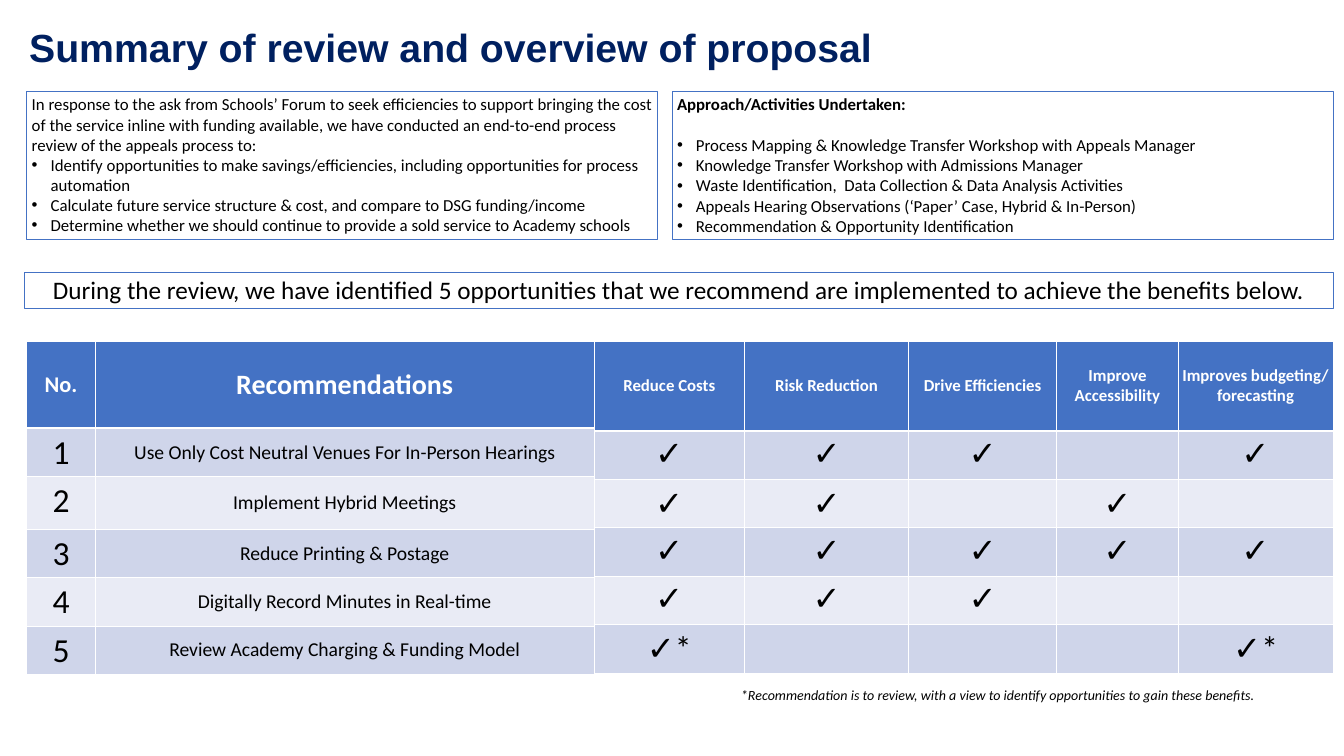
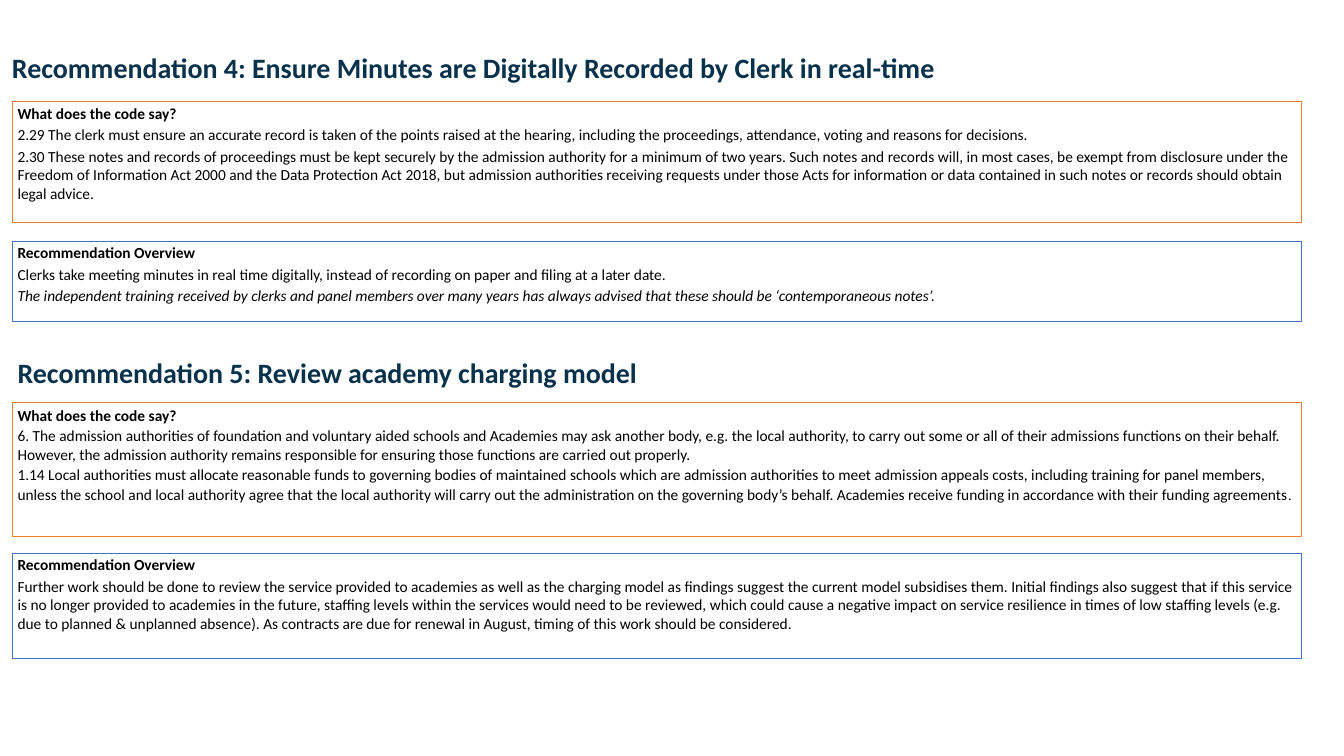
from dataclasses import dataclass

from lxml.etree import SubElement
from pptx import Presentation
from pptx.dml.color import RGBColor
from pptx.enum.shapes import MSO_SHAPE as Preset
from pptx.enum.text import MSO_ANCHOR as Anchor, PP_ALIGN as Align
from pptx.oxml.ns import qn
from pptx.util import Pt

BLUE, ORANGE, NAVY, INK = "4472C4", "ED7D31", "002060", "08314C"
WHITE, BLACK = "FFFFFF", "000000"
BANDS = ("E9EBF5", "CFD5EA")
BODY_FONT, TITLE_FONT = "Calibri", "Arial"
BULLET_INDENT = 27
CELL_MARGIN = 5.76
TABLE_TOP = 487.4

CODE_HEADING = "What does the code say?"
OVERVIEW_HEADING = "Recommendation Overview"
HEADINGS = ("Reduce Costs", "Risk Reduction", "Drive Efficiencies",
            "Improve Accessibility", "Improves budgeting/\nforecasting")
RECOMMENDATIONS = (
    "Use Only Cost Neutral Venues For In-Person Hearings",
    "Implement Hybrid Meetings",
    "Reduce Printing & Postage",
    "Digitally Record Minutes in Real-time",
    "Review Academy Charging & Funding Model",
)
BENEFITS = (
    ("✓", "✓", "✓", "", "✓"),
    ("✓", "✓", "", "✓", ""),
    ("✓", "✓", "✓", "✓", "✓"),
    ("✓", "✓", "✓", "", ""),
    ("✓*", "", "", "", "✓*"),
)
REVIEW_INTRO = (
    "In response to the ask from Schools’ Forum to seek efficiencies to support bringing "
    "the cost of the service inline with funding available, we have conducted an "
    "end-to-end process review of the appeals process to:")
REVIEW_AIMS = (
    "Identify opportunities to make savings/efficiencies, including opportunities for "
    "process automation",
    "Calculate future service structure & cost, and compare to DSG funding/income",
    "Determine whether we should continue to provide a sold service to Academy schools",
)
ACTIVITIES = (
    "Process Mapping & Knowledge Transfer Workshop with Appeals Manager",
    "Knowledge Transfer Workshop with Admissions Manager",
    "Waste Identification,  Data Collection & Data Analysis Activities",
    "Appeals Hearing Observations (‘Paper’ Case, Hybrid & In-Person)",
    "Recommendation & Opportunity Identification",
)
MINUTES_CODE = (
    "2.29 The clerk must ensure an accurate record is taken of the points raised at the "
    "hearing, including the proceedings, attendance, voting and reasons for decisions.",
    "2.30 These notes and records of proceedings must be kept securely by the admission "
    "authority for a minimum of two years. Such notes and records will, in most cases, be "
    "exempt from disclosure under the Freedom of Information Act 2000 and the Data "
    "Protection Act 2018, but admission authorities receiving requests under those Acts "
    "for information or data contained in such notes or records should obtain legal advice.",
)
MINUTES_OVERVIEW = (
    "Clerks take meeting minutes in real time digitally, instead of recording on paper and "
    "filing at a later date.")
MINUTES_REMARK = (
    "The independent training received by clerks and panel members over many years has "
    "always advised that these should be ‘contemporaneous notes’.")
CHARGING_CODE = (
    "\n6. The admission authorities of foundation and voluntary aided schools and Academies "
    "may ask another body, e.g. the local authority, to carry out some or all of their "
    "admissions functions on their behalf. However, the admission authority remains "
    "responsible for ensuring those functions are carried out properly.\n"
    "1.14 Local authorities must allocate reasonable funds to governing bodies of maintained "
    "schools which are admission authorities to meet admission appeals costs, including "
    "training for panel members, unless the school and local authority agree that the local "
    "authority will carry out the administration on the governing body’s behalf. Academies "
    "receive funding in accordance with their funding agreements")
CHARGING_OVERVIEW = (
    "Further work should be done to review the service provided to academies as well as the "
    "charging model as findings suggest the current model subsidises them. Initial findings "
    "also suggest that if this service is no longer provided to academies in the future, "
    "staffing levels within the services would need to be reviewed, which could cause a "
    "negative impact on service resilience in times of low staffing levels (e.g. due to "
    "planned & unplanned absence). As contracts are due for renewal in August, timing of "
    "this work should be considered.")


@dataclass(frozen=True)
class Box:
    """Place and size in points."""
    left: float
    top: float
    width: float
    height: float

    def lengths(self) -> tuple:
        """Return the four lengths for python-pptx."""
        return Pt(self.left), Pt(self.top), Pt(self.width), Pt(self.height)


def colour(value: str) -> RGBColor:
    """Turn a hex string into a colour."""
    return RGBColor.from_string(value)


def write(frame, text: str, *, size: float, font: str = BODY_FONT, color: str = BLACK,
          bold: bool = False, italic: bool = False, align=Align.LEFT, bullet: bool = False,
          before: float = 0, after: float = 0, spacing: float = 1,
          continued: bool = False) -> None:
    """Add a paragraph to a frame, or continue its last one."""
    paragraph = frame.paragraphs[-1]
    if not continued:
        if paragraph.runs:
            paragraph = frame.add_paragraph()
            paragraph.space_before = Pt(before)
        paragraph.alignment = align
        paragraph.space_after = Pt(after)
        paragraph.line_spacing = spacing
        if bullet:
            properties = paragraph._p.get_or_add_pPr()
            properties.set("marL", str(Pt(BULLET_INDENT)))
            properties.set("indent", str(-Pt(BULLET_INDENT)))
            SubElement(properties, qn("a:buFont"), typeface="Arial")
            SubElement(properties, qn("a:buChar"), char="•")
    for index, line in enumerate(text.split("\n")):
        if index:
            paragraph.add_line_break()
        if line:
            run = paragraph.add_run()
            run.text = line
            run.font.size, run.font.name = Pt(size), font
            run.font.bold, run.font.italic = bold, italic
            run.font.color.rgb = colour(color)


def add_label(slide, box: Box, text: str, *, anchor=Anchor.TOP, **text_format) -> None:
    """Add a wrapped text box with one paragraph."""
    frame = slide.shapes.add_textbox(*box.lengths()).text_frame
    frame.word_wrap = True
    frame.vertical_anchor = anchor
    write(frame, text, **text_format)


def add_panel(slide, box: Box, line: str = BLUE):
    """Add a white outlined rectangle and return its text frame."""
    shape = slide.shapes.add_shape(Preset.RECTANGLE, *box.lengths())
    shape.shadow.inherit = False
    shape.fill.solid()
    shape.fill.fore_color.rgb = colour(WHITE)
    shape.line.color.rgb = colour(line)
    shape.line.width = Pt(1)
    shape.text_frame.word_wrap = True
    shape.text_frame.vertical_anchor = Anchor.TOP
    return shape.text_frame


def add_border(cell, side: str, width: float) -> None:
    """Give one side of a cell a white border."""
    line = SubElement(cell._tc.get_or_add_tcPr(), qn(f"a:{side}"), w=str(Pt(width)))
    SubElement(SubElement(line, qn("a:solidFill")), qn("a:srgbClr"), val=WHITE)


def add_grid(slide, left: float, columns: tuple, rows: tuple):
    """Add a banded table with a blue heading row."""
    box = Box(left, TABLE_TOP, sum(columns), sum(rows))
    table = slide.shapes.add_table(len(rows), len(columns), *box.lengths()).table
    table.horz_banding = False
    for column, width in zip(table.columns, columns):
        column.width = Pt(width)
    for index, (row, height) in enumerate(zip(table.rows, rows)):
        row.height = Pt(height)
        for cell in row.cells:
            add_border(cell, "lnL", 1)
            add_border(cell, "lnR", 1)
            add_border(cell, "lnT", 3 if index == 1 else 1)
            add_border(cell, "lnB", 3 if index == 0 else 1)
            cell.fill.solid()
            cell.fill.fore_color.rgb = colour(BANDS[index % 2] if index else BLUE)
    return table


def fill_cell(cell, text: str, *, middle: bool = True, **text_format) -> None:
    """Write centred text in a cell, one paragraph a line."""
    cell.margin_left = cell.margin_right = Pt(CELL_MARGIN)
    cell.margin_top = cell.margin_bottom = Pt(CELL_MARGIN)
    cell.vertical_anchor = Anchor.MIDDLE if middle else Anchor.TOP
    for line in text.split("\n"):
        write(cell.text_frame, line, align=Align.CENTER, **text_format)


def add_recommendation_table(slide) -> None:
    """Add the numbered list of recommendations."""
    table = add_grid(slide, 38.2, (97.9, 712.1), (124.6, 68.4, 74.9, 68.4, 68.4, 68.4))
    for column, (heading, size) in enumerate((("No.", 32), ("Recommendations", 40))):
        fill_cell(table.cell(0, column), heading, size=size, color=WHITE, bold=True)
    for number, recommendation in enumerate(RECOMMENDATIONS, 1):
        fill_cell(table.cell(number, 0), str(number), size=48, middle=number == 1)
        fill_cell(table.cell(number, 1), recommendation, size=28)


def add_benefit_table(slide) -> None:
    """Add the matrix of benefits with its ticks."""
    table = add_grid(slide, 848.2, (215.3, 234, 211.7, 173.5, 221), (128.2,) + (69.1,) * 5)
    for column, heading in enumerate(HEADINGS):
        fill_cell(table.cell(0, column), heading, size=24, color=WHITE, bold=True)
    for row, marks in enumerate(BENEFITS, 1):
        for column, mark in enumerate(marks):
            if mark:
                cell = table.cell(row, column)
                fill_cell(cell, mark[0], size=48, font=TITLE_FONT, middle=row == 2)
                if mark[1:]:
                    write(cell.text_frame, mark[1:], size=48, continued=True)


def build_summary(slide) -> None:
    """Build the summary of the review."""
    add_benefit_table(slide)
    add_label(slide, Box(34.6, 38.9, 1755.4, 63.4), "Summary of review and overview of proposal",
              anchor=Anchor.MIDDLE, size=56, font=TITLE_FONT, color=NAVY, bold=True, spacing=0.9)
    banner = add_panel(slide, Box(34.6, 388.8, 1869.1, 51.1))
    write(banner, "During the review, we have identified 5 opportunities that we recommend are "
          "implemented to achieve the benefits below.", size=36, align=Align.CENTER)
    add_recommendation_table(slide)
    add_label(slide, Box(1051.2, 977.8, 834.5, 31.7),
              "*Recommendation is to review, with a view to identify opportunities to gain "
              "these benefits.", size=20, italic=True)
    aims = add_panel(slide, Box(38.2, 131, 900.7, 211))
    write(aims, REVIEW_INTRO, size=24)
    activities = add_panel(slide, Box(959.8, 131, 943.9, 211))
    write(activities, "Approach/Activities Undertaken:", size=24, bold=True, after=29.3)
    for frame, items in ((aims, REVIEW_AIMS), (activities, ACTIVITIES)):
        for item in items:
            write(frame, item, size=24, bullet=True)


def build_recommendations(slide) -> None:
    """Build recommendations 4 and 5."""
    body = {"size": 22, "before": 4.4}
    title = {"size": 40, "color": INK, "bold": True}

    def add_section(top: float, height: float, heading: str, line: str, spacing: float = 1):
        """Add a full-width panel with its heading."""
        frame = add_panel(slide, Box(18, top, 1841, height), line)
        write(frame, heading, bold=True, spacing=spacing, **body)
        return frame

    add_label(slide, Box(10, 68.4, 1849, 88.6), "Recommendation 4: Ensure Minutes are "
              "Digitally Recorded by Clerk in real-time", **title)
    minutes_overview = add_section(344.2, 114.5, OVERVIEW_HEADING, BLUE)
    write(minutes_overview, MINUTES_OVERVIEW, **body)
    write(minutes_overview, MINUTES_REMARK, italic=True, **body)
    minutes_code = add_section(144.7, 173.5, CODE_HEADING, ORANGE)
    for clause in MINUTES_CODE:
        write(minutes_code, clause, **body)

    add_label(slide, Box(18, 504.7, 1849, 51.8),
              "Recommendation 5: Review academy charging model", **title)
    charging_code = add_section(574.6, 191.5, CODE_HEADING, ORANGE, spacing=1.07)
    write(charging_code, CHARGING_CODE, size=22, continued=True)
    write(charging_code, ".", size=20, continued=True)
    charging_overview = add_section(789.8, 150.5, OVERVIEW_HEADING, BLUE)
    write(charging_overview, CHARGING_OVERVIEW, **body)


def main() -> None:
    """Build and save the presentation."""
    presentation = Presentation()
    presentation.slide_width, presentation.slide_height = Pt(1919.52), Pt(1080)
    for build in (build_summary, build_recommendations):
        build(presentation.slides.add_slide(presentation.slide_layouts[6]))
    presentation.save("out.pptx")


if __name__ == "__main__":
    main()
